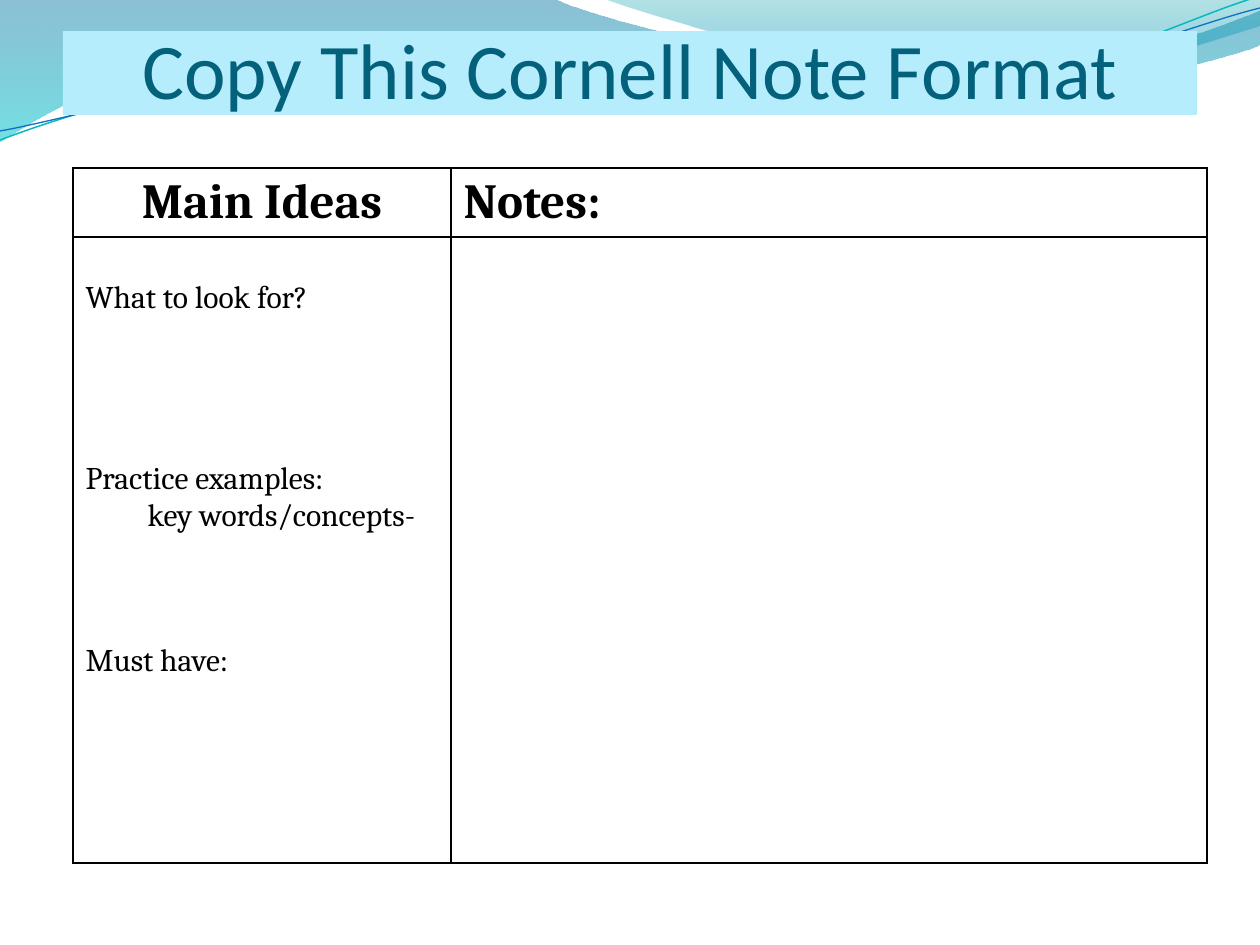
from lxml.etree import SubElement as Sub
from pptx import Presentation
from pptx.dml.color import RGBColor as RGB
from pptx.enum.shapes import MSO_SHAPE as Shape
from pptx.enum.text import MSO_ANCHOR as Anchor, PP_ALIGN as Align
from pptx.oxml.ns import qn
from pptx.util import Pt

PX = 914400 // 126
SIZE = 1260, 945
BLACK = RGB(0x00, 0x00, 0x00)
TEAL = RGB(0x04, 0x61, 0x7B)
PALE = RGB(0xB5, 0xED, 0xFD)
AQUA = RGB(0x0A, 0xB8, 0xBF)
BLUE = RGB(0x0F, 0x6F, 0xC6)
DEEP = RGB(0x00, 0x74, 0xA1)
CYAN = RGB(0x00, 0xC6, 0xCF)
SEA = RGB(0x00, 0xA1, 0xA9)
SKY = RGB(0x00, 0x8B, 0xBF)

# Outlines: two numbers are a straight step, six are a Bezier step.
# Stops: position, colour, opacity in percent.
WAVES = [
    ([(-1, -1), (554, -1), (600, 21, 837, 79, 955, 79),
      (1074, 79, 1207, 33, 1260, 11), (1261, 45),
      (1239, 55, 1096, 96, 940, 94), (784, 94, 481, 35, 324, 43),
      (161, 45, 58, 105, -1, 142)],
     [(0, DEEP, 45), (1, CYAN, 55)]),
    ([(604, -1), (641, 14, 859, 78, 969, 82),
      (1085, 87, 1211, 40, 1260, 26), (1260, 0)],
     [(0, SEA, 30), (0.8, SKY, 45)]),
]
CURVES = [
    ([(0, 140), (60, 117, 199, 72, 349, 66), (498, 59, 747, 112, 898, 101),
      (1050, 89, 1182, 19, 1257, -3)], AQUA, 0.85),
    ([(0, 131), (59, 121, 207, 77, 357, 71), (508, 64, 752, 106, 903, 94),
      (1053, 84, 1186, 26, 1260, 8)], BLUE, 0.75),
]
TITLE = "Copy This Cornell Note Format"
TITLE_BOX = 63, 31, 1134, 84
HEADS = [("Main Ideas", Align.CENTER), ("Notes:", Align.LEFT)]
# Text, space before in points, indent in px
IDEAS = [
    ("What to look for?", 0, 0),
    ("Practice examples:", 83, 0),
    ("key words/concepts-", 0, 62),
    ("Must have:", 62, 0),
]
TABLE_AT = 73, 168
COLS = 378, 756
ROWS = 68, 626


def draw(shapes, path, close):
    """Draw the outline, then bend its six-number steps into curves."""
    first, *steps = path
    pts = [step[i:i + 2] for step in steps for i in range(0, len(step), 2)]
    pen = shapes.build_freeform(*first, scale=float(PX))
    pen.add_line_segments(pts, close=close)
    form = pen.convert_to_shape()
    form.shadow.inherit = False
    lines = form.element.spPr.iter(qn("a:lnTo"))
    lines = iter(list(lines))
    for step in steps:
        line = next(lines)
        if len(step) == 6:
            curve = line.makeelement(qn("a:cubicBezTo"), {})
            line.addprevious(curve)
            for part in (line, next(lines), next(lines)):
                curve.append(part[0])
                part.getparent().remove(part)
    return form


def shade(form, stops):
    form.line.fill.background()
    form.fill.gradient()
    form.fill.gradient_angle = 270
    for stop, (pos, color, alpha) in zip(form.fill.gradient_stops, stops):
        stop.position = pos
        stop.color.rgb = color
    tags = form.element.spPr.iter(qn("a:srgbClr"))
    for tag, (pos, color, alpha) in zip(tags, stops):
        Sub(tag, qn("a:alpha"), val=str(alpha * 1000))


def write(para, text, size, font="Cambria", color=BLACK, bold=False,
          align=Align.LEFT, before=0, indent=0):
    para.alignment = align
    if before:
        para.space_before = Pt(before)
    if indent:
        para._p.get_or_add_pPr().set("marL", str(indent * PX))
    run = para.add_run()
    run.text = text
    run.font.name = font
    run.font.size = Pt(size)
    run.font.bold = bold
    run.font.color.rgb = color


def border(cell):
    props = cell._tc.get_or_add_tcPr()
    for i, side in enumerate(("lnL", "lnR", "lnT", "lnB")):
        line = props.makeelement(qn("a:" + side), {"w": str(Pt(1))})
        Sub(Sub(line, qn("a:solidFill")), qn("a:srgbClr"), val=str(BLACK))
        props.insert(i, line)


def add_title(shapes):
    box = shapes.add_shape(Shape.RECTANGLE, *(v * PX for v in TITLE_BOX))
    box.shadow.inherit = False
    box.fill.solid()
    box.fill.fore_color.rgb = PALE
    box.line.fill.background()
    frame = box.text_frame
    frame.word_wrap = True
    frame.vertical_anchor = Anchor.BOTTOM
    frame.margin_left = frame.margin_right = frame.margin_bottom = 0
    frame.margin_top = 6 * PX
    write(frame.paragraphs[0], TITLE, 45, font="Calibri", color=TEAL,
          align=Align.CENTER)


def add_notes(shapes):
    box = *TABLE_AT, sum(COLS), sum(ROWS)
    table = shapes.add_table(len(ROWS), len(COLS),
                             *(v * PX for v in box)).table
    table.first_row = table.horz_banding = False
    for col, width in zip(table.columns, COLS):
        col.width = width * PX
    for row, height in zip(table.rows, ROWS):
        row.height = height * PX
    for cell in table.iter_cells():
        cell.fill.background()
        border(cell)
    for i, (text, align) in enumerate(HEADS):
        write(table.cell(0, i).text_frame.paragraphs[0], text, 28,
              bold=True, align=align)
    cell = table.cell(1, 0)
    cell.margin_top = 43 * PX
    frame = cell.text_frame
    for i, (text, before, indent) in enumerate(IDEAS):
        para = frame.add_paragraph() if i else frame.paragraphs[0]
        write(para, text, 18, before=before, indent=indent)


def main():
    deck = Presentation()
    deck.slide_width, deck.slide_height = (v * PX for v in SIZE)
    shapes = deck.slides.add_slide(deck.slide_layouts[6]).shapes
    for path, stops in WAVES:
        shade(draw(shapes, path, True), stops)
    for path, color, width in CURVES:
        form = draw(shapes, path, False)
        form.fill.background()
        form.line.color.rgb = color
        form.line.width = Pt(width)
    add_title(shapes)
    add_notes(shapes)
    deck.save("out.pptx")


if __name__ == "__main__":
    main()
